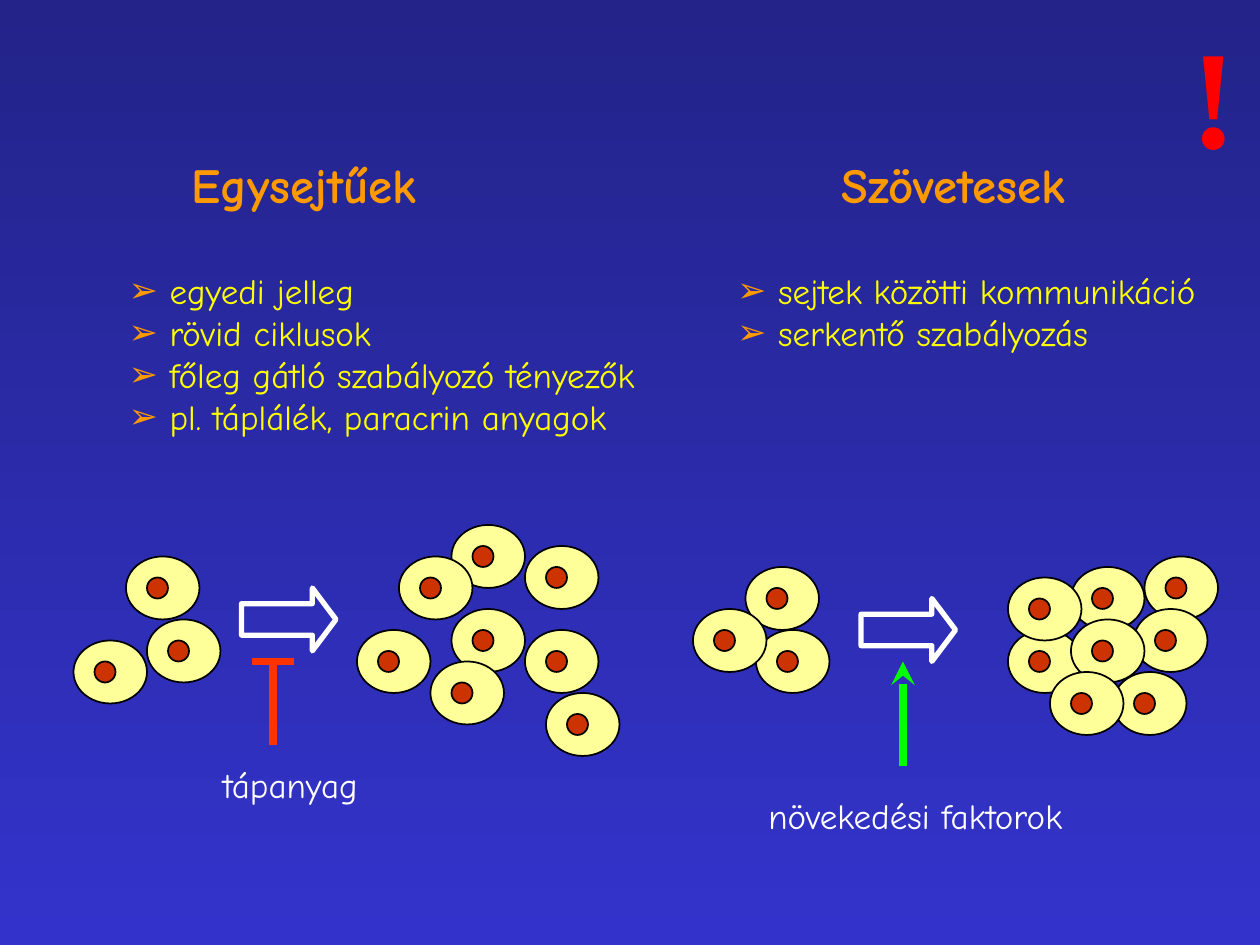
from lxml.etree import SubElement
from pptx import Presentation
from pptx.dml.color import RGBColor
from pptx.enum.shapes import MSO_CONNECTOR, MSO_SHAPE
from pptx.enum.text import MSO_ANCHOR, MSO_AUTO_SIZE, PP_ALIGN
from pptx.oxml.ns import qn
from pptx.util import Inches, Pt

rgb = RGBColor.from_string
FONT = "Comic Neue"
U = 1 / 12  # drawing grid, inches


def write(sp, box, lines, size, color, font=FONT, bold=False):
    """Place a text shape and fill it with formatted paragraphs."""
    sp.left, sp.top, sp.width, sp.height = [Inches(v) for v in box]
    tf = sp.text_frame
    tf.text = "\n".join(lines)
    tf.word_wrap = True
    tf.auto_size = MSO_AUTO_SIZE.NONE
    tf.vertical_anchor = MSO_ANCHOR.TOP
    for p in tf.paragraphs:
        p.alignment = PP_ALIGN.LEFT
        p.space_before = Pt(0)
        f = p.runs[0].font
        f.name, f.size, f.bold = font, Pt(size), bold
        f.color.rgb = rgb(color)


def add_line(shapes, x1, y1, x2, y2, color):
    """Draw a thick line between two grid points."""
    c = shapes.add_connector(MSO_CONNECTOR.STRAIGHT, *[Inches(v * U) for v in (x1, y1, x2, y2)])
    c.line.color.rgb = rgb(color)
    c.line.width = Pt(4.5)
    SubElement(c._element.spPr, qn("a:effectLst"))
    return c


prs = Presentation()
prs.slide_width, prs.slide_height = Inches(10), Inches(7.5)
s = prs.slides.add_slide(prs.slide_layouts.get_by_name("Comparison"))

bg = s.background.fill
bg.gradient()
bg.gradient_angle = 270
for stop, color, pos in zip(bg.gradient_stops, ("232389", "3333CC"), (0, 1)):
    stop.color.rgb = rgb(color)
    stop.position = pos

# Headings and lists
title, head_left, list_left, head_right, list_right = list(s.placeholders)[:5]
title._element.getparent().remove(title._element)
write(head_left, (1.42, 1.18, 2.24, 0.57), ["Egysejtűek"], 28, "FF9900", bold=True)
write(head_right, (6.58, 1.18, 2.31, 0.57), ["Szövetesek"], 28, "FF9900", bold=True)
write(list_left, (0.92, 2.09, 4.63, 1.43),
      [" egyedi jelleg", " rövid ciklusok", " főleg gátló szabályozó tényezők",
       " pl. táplálék, paracrin anyagok"], 20, "FFFF00")
write(list_right, (5.75, 2.09, 4.19, 0.77),
      [" sejtek közötti kommunikáció", " serkentő szabályozás"], 20, "FFFF00")
for sp in (list_left, list_right):
    for p in sp.text_frame.paragraphs:
        pPr = p._p.get_or_add_pPr()
        pPr.set("marL", "0")
        pPr.set("indent", "0")
        SubElement(SubElement(pPr, qn("a:buClr")), qn("a:srgbClr"), val="FF9900")
        SubElement(pPr, qn("a:buChar"), char="➢")

# Cells with nuclei: top left corners in grid units, back to front
cells = [
    (12, 53), (14, 59), (7, 61),
    (43, 50), (34, 60), (38, 53), (50, 52), (50, 60), (43, 58), (52, 66), (41, 63),
    (71, 54), (72, 60), (66, 58),
    (102, 54), (96, 60), (96, 55), (109, 53), (108, 58), (102, 59), (106, 64), (100, 64),
]
for x, y in cells:
    cell = s.shapes.add_group_shape()
    for box, color in (((x, y, 7, 6), "FFFF99"), ((x + 2, y + 2, 2, 2), "CC3300")):
        sp = cell.shapes.add_shape(MSO_SHAPE.OVAL, *[Inches(v * U) for v in box])
        sp.shadow.inherit = False
        sp.fill.solid()
        sp.fill.fore_color.rgb = rgb(color)
        sp.line.color.rgb = rgb("000000")
        sp.line.width = Pt(1)

# Growth arrows
for x, y in ((23, 56), (82, 57)):
    sp = s.shapes.add_shape(MSO_SHAPE.RIGHT_ARROW, *[Inches(v * U) for v in (x, y, 9, 6)])
    sp.adjustments[0], sp.adjustments[1] = 0.5, 0.375
    sp.shadow.inherit = False
    sp.fill.background()
    sp.line.color.rgb = rgb("FFFFFF")
    sp.line.width = Pt(3)

# Inhibition and stimulation marks
inhibition = s.shapes.add_group_shape()
add_line(inhibition.shapes, 26, 71, 26, 63, "FF3300")
add_line(inhibition.shapes, 24, 63, 28, 63, "FF3300")
stimulation = add_line(s.shapes, 86, 73, 86, 63, "00FF00")
SubElement(stimulation.line._get_or_add_ln(), qn("a:tailEnd"), type="stealth")

# Labels
for box, text, size, color, font, bold in (
    ((1.67, 6.01, 1.35, 0.43), "tápanyag", 20, "FFFFFF", FONT, False),
    ((6, 6.26, 2.83, 0.43), "növekedési faktorok", 20, "FFFFFF", FONT, False),
    ((9.35, 0.02, 0.58, 1.45), "!", 80, "FF0000", "Times New Roman", True),
):
    sp = s.shapes.add_textbox(0, 0, 0, 0)
    write(sp, box, [text], size, color, font, bold)

prs.save("out.pptx")
